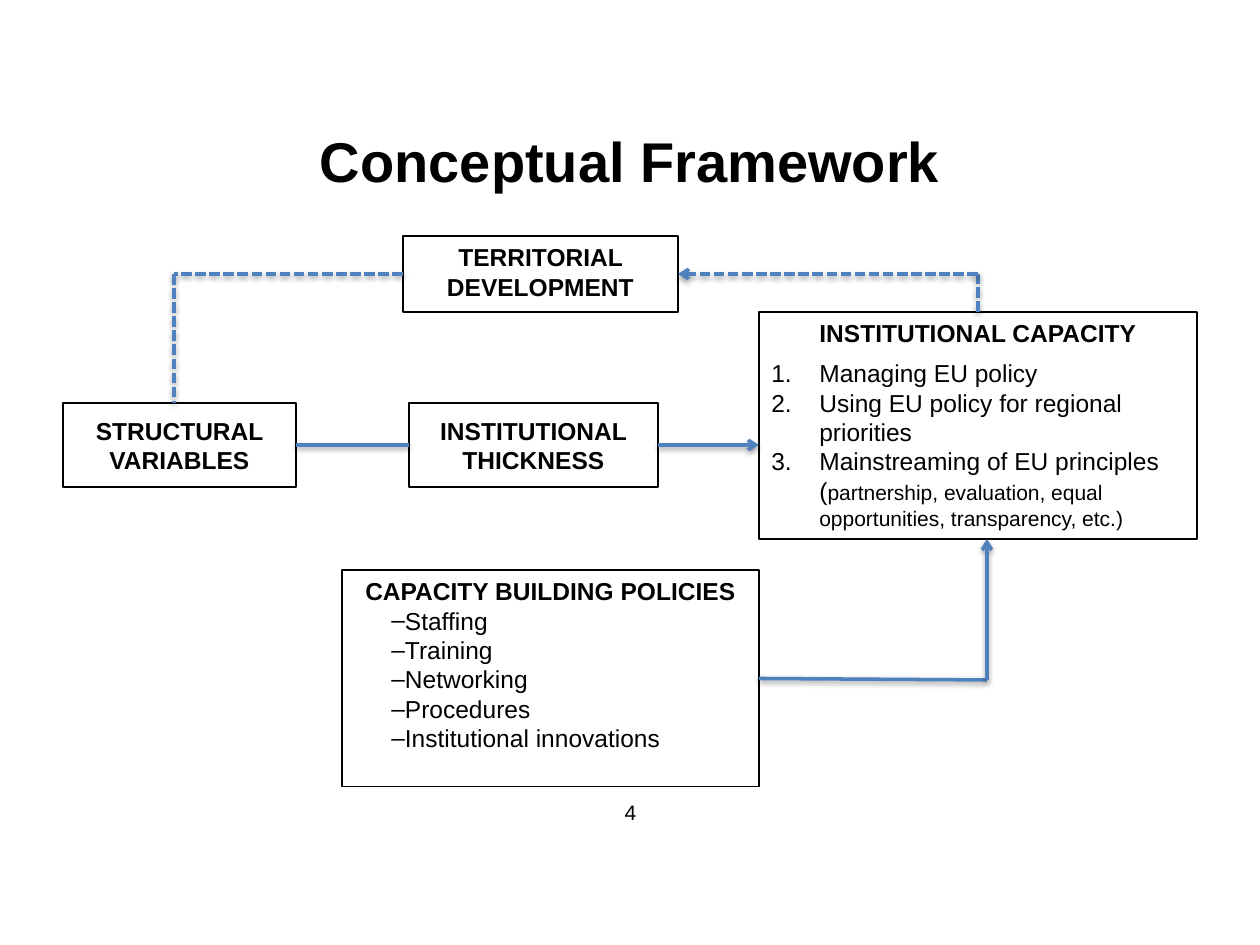
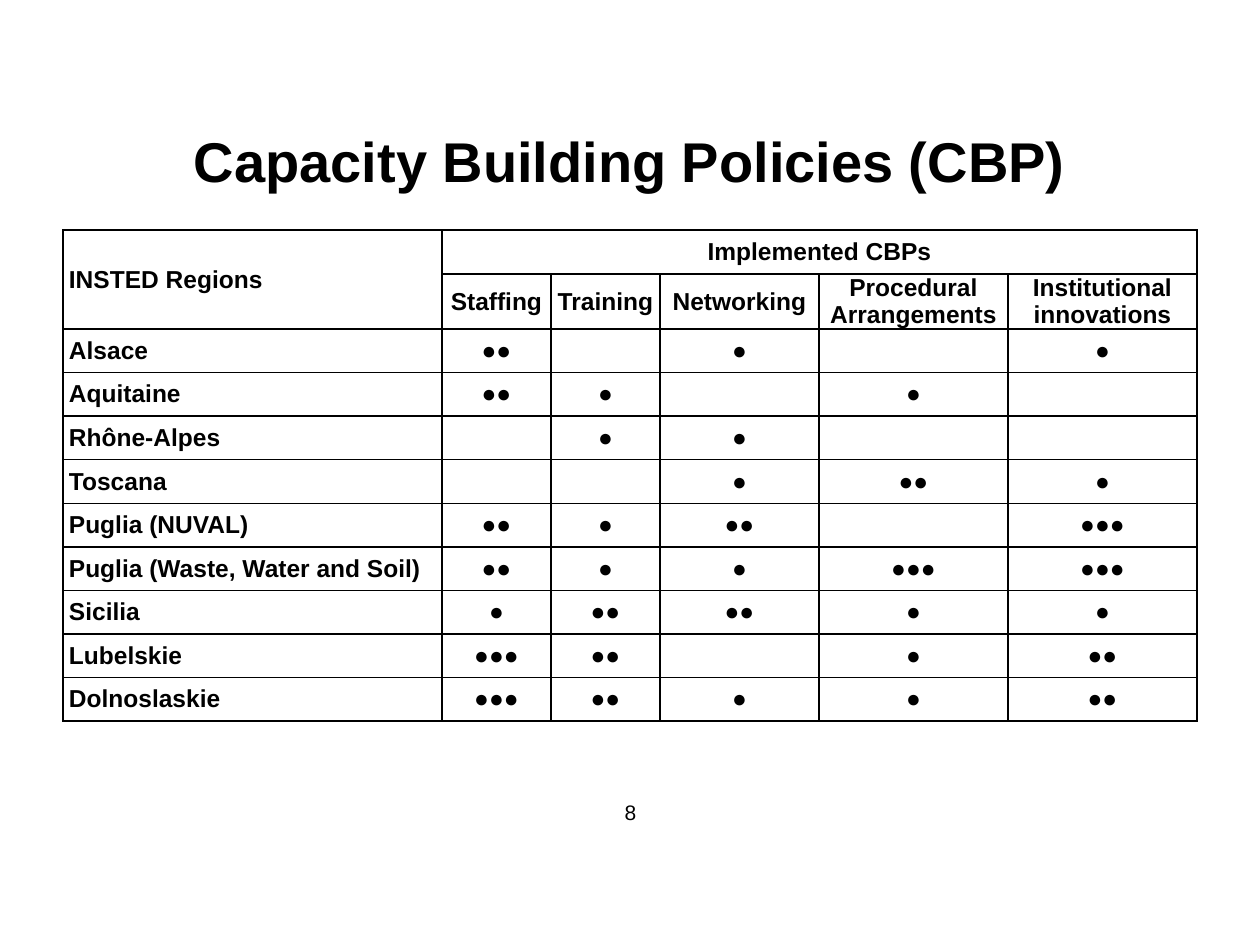
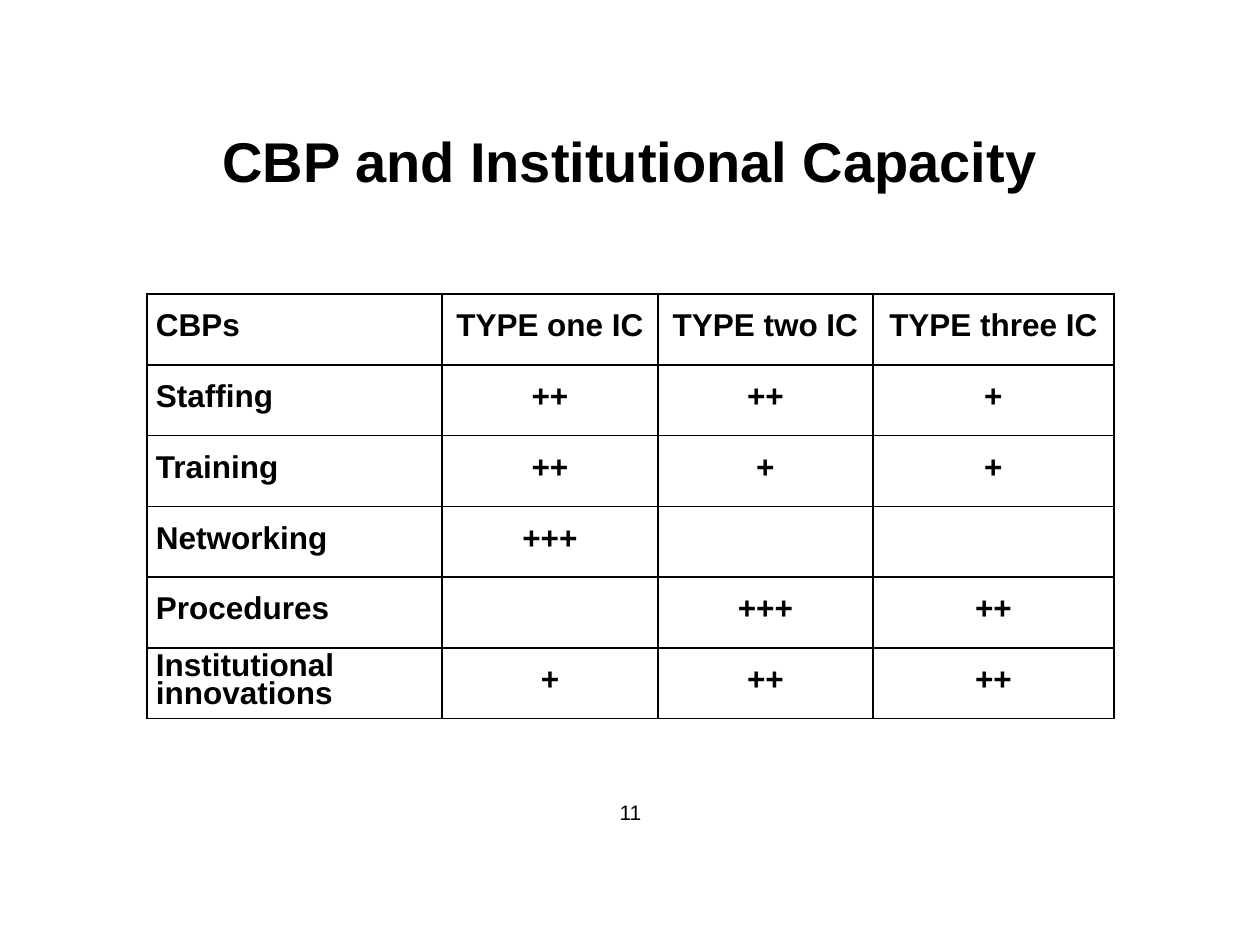
from dataclasses import dataclass

from lxml import etree
from pptx import Presentation
from pptx.dml.color import RGBColor
from pptx.enum import dml, shapes, text
from pptx.oxml import ns
from pptx.util import Pt

SCALE = 914400 / 126
LEFT, MID = text.PP_ALIGN.LEFT, text.PP_ALIGN.CENTER
TOP, CORE = text.MSO_ANCHOR.TOP, text.MSO_ANCHOR.MIDDLE


@dataclass(frozen=True)
class Theme:
    font: str = "Arial"
    ink: str = "000000"
    paper: str = "FFFFFF"
    link: str = "4F81BD"
    title: int = 32
    large: int = 18
    body: int = 14
    small: int = 12


def emu(px):
    return round(px * SCALE)


def color(code):
    return RGBColor.from_string(code)


def node(parent, tag, **attrs):
    child = etree.SubElement(parent, ns.qn("a:" + tag))
    for key, value in attrs.items():
        child.set(key, str(value))
    return child


def write(frame, words, theme, size=None, bold=False, align=MID, after=None,
          line=None, bullet=None, indent=(0, 0), tail=None):
    size = size or theme.body
    para = frame.paragraphs[0]
    if para.runs:
        para = frame.add_paragraph()
    para.alignment = align
    if after:
        para.space_after = Pt(after)
    if line:
        para.line_spacing = Pt(line)
    if bullet:
        props = para._p.get_or_add_pPr()
        props.set("marL", str(emu(indent[0])))
        props.set("indent", str(emu(indent[1])))
        node(props, "buFont", typeface=theme.font)
        if bullet == "1.":
            node(props, "buAutoNum", type="arabicPeriod")
        else:
            node(props, "buChar", char=bullet)
    para.font.size = Pt(size)
    for part, points in ((words, size), (tail, theme.small)):
        if part:
            run = para.add_run()
            run.text = part
            run.font.name = theme.font
            run.font.size = Pt(points)
            run.font.bold = bold
            run.font.color.rgb = color(theme.ink)


class Deck:
    def __init__(self, theme):
        self.theme = theme
        self.show = Presentation()
        self.show.slide_width = emu(1260)
        self.show.slide_height = emu(945)
        self.slide = None

    def page(self, title, number):
        self.slide = self.show.slides.add_slide(self.show.slide_layouts[5])
        head = self.slide.shapes.title
        head.left, head.top, head.width, head.height = map(emu, (63, 121, 1134, 79))
        foot = self.slide.shapes.add_textbox(*map(emu, (583, 787, 95, 50)))
        for shape in (head, foot):
            shape.text_frame.word_wrap = True
            shape.text_frame.auto_size = text.MSO_AUTO_SIZE.NONE
            shape.text_frame.vertical_anchor = CORE
        write(head.text_frame, title, self.theme, size=self.theme.title, bold=True)
        write(foot.text_frame, number, self.theme, size=self.theme.small)

    def box(self, label, *place, anchor=CORE, after=None):
        shape = self.slide.shapes.add_shape(shapes.MSO_SHAPE.RECTANGLE, *map(emu, place))
        shape.shadow.inherit = False
        shape.fill.solid()
        shape.fill.fore_color.rgb = color(self.theme.paper)
        shape.line.color.rgb = color(self.theme.ink)
        shape.line.width = Pt(0.75)
        shape.text_frame.word_wrap = True
        shape.text_frame.vertical_anchor = anchor
        write(shape.text_frame, label, self.theme, bold=True, after=after)
        return shape

    def items(self, shape, lines, **style):
        for line in lines:
            write(shape.text_frame, line, self.theme, align=LEFT, **style)

    def line(self, start, end, begin=None, finish=None, dash=False, arrow=False):
        link = self.slide.shapes.add_connector(
            shapes.MSO_CONNECTOR.STRAIGHT, *map(emu, start + end))
        if begin:
            link.begin_connect(*begin)
        if finish:
            link.end_connect(*finish)
        link.line.color.rgb = color(self.theme.link)
        link.line.width = Pt(2)
        if dash:
            link.line.dash_style = dml.MSO_LINE.SQUARE_DOT
        props = link._element.spPr
        if arrow:
            node(props.find(ns.qn("a:ln")), "tailEnd", type="arrow")
        glow = node(node(props, "effectLst"), "outerShdw", blurRad=40000,
                    dist=20000, dir=5400000, rotWithShape=0)
        node(node(glow, "srgbClr", val=self.theme.ink), "alpha", val=38000)

    def edge(self, cell):
        props = cell._tc.get_or_add_tcPr()
        for side in "LRTB":
            rule = node(props, "ln" + side, w=Pt(1))
            node(node(rule, "solidFill"), "srgbClr", val=self.theme.ink)
        cell.fill.background()

    def grid(self, rows, left, top, cols, highs, heads=1, pad=6, plain=False, **style):
        frame = self.slide.shapes.add_table(
            len(rows), len(cols), *map(emu, (left, top, sum(cols), sum(highs))))
        table = frame.table
        table.first_row = table.horz_banding = False
        for col, wide in zip(table.columns, cols):
            col.width = emu(wide)
        for row, high in zip(table.rows, highs):
            row.height = emu(high)
        for r, row in enumerate(rows):
            for c, words in enumerate(row):
                cell = table.cell(r, c)
                self.edge(cell)
                cell.margin_left = cell.margin_right = emu(pad)
                cell.margin_top = cell.margin_bottom = 0
                cell.vertical_anchor = CORE
                if words:
                    write(cell.text_frame, words, self.theme,
                          bold=not plain or r < heads or c == 0,
                          align=MID if c else LEFT, **style)
        return table


def model(deck):
    deck.page("Conceptual Framework", "4")
    growth = deck.box("TERRITORIAL DEVELOPMENT", 403, 236, 275, 76, anchor=TOP)
    skill = deck.box("INSTITUTIONAL CAPACITY", 759, 312, 438, 227, anchor=TOP, after=6)
    numbers = dict(bullet="1.", indent=(48, -48))
    deck.items(skill, ["Managing EU policy", "Using EU policy for regional priorities"],
               **numbers)
    deck.items(skill, ["Mainstreaming of EU principles ("],
               tail="partnership, evaluation, equal opportunities, transparency, etc.)",
               **numbers)
    plans = deck.box("CAPACITY BUILDING POLICIES", 342, 570, 417, 217, anchor=TOP)
    deck.items(plans, ["Staffing", "Training", "Networking", "Procedures",
                       "Institutional innovations"], bullet="–", indent=(13, 24))
    base = deck.box("STRUCTURAL VARIABLES", 63, 403, 233, 84)
    thick = deck.box("INSTITUTIONAL THICKNESS", 409, 403, 249, 84)

    deck.line((296, 445), (409, 445), begin=(base, 3), finish=(thick, 1))
    deck.line((658, 445), (759, 445), begin=(thick, 3), arrow=True)
    deck.line((759, 679), (987, 680), begin=(plans, 3))
    deck.line((987, 680), (987, 539), arrow=True)
    deck.line((403, 274), (174, 274), begin=(growth, 1), dash=True)
    deck.line((174, 274), (174, 403), dash=True)
    deck.line((978, 312), (978, 274), begin=(skill, 0), dash=True)
    deck.line((978, 274), (678, 274), finish=(growth, 3), dash=True, arrow=True)


def regions(deck):
    deck.page("Capacity Building Policies (CBP)", "8")
    scores = [
        ("Alsace", 2, 0, 1, 0, 1),
        ("Aquitaine", 2, 1, 0, 1, 0),
        ("Rhône-Alpes", 0, 1, 1, 0, 0),
        ("Toscana", 0, 0, 1, 2, 1),
        ("Puglia (NUVAL)", 2, 1, 2, 0, 3),
        ("Puglia (Waste, Water and Soil)", 2, 1, 1, 3, 3),
        ("Sicilia", 1, 2, 2, 1, 1),
        ("Lubelskie", 3, 2, 0, 1, 2),
        ("Dolnoslaskie", 3, 2, 1, 1, 2),
    ]
    rows = [
        ("INSTED Regions", "Implemented CBPs", "", "", "", ""),
        ("", "Staffing", "Training", "Networking", "Procedural Arrangements",
         "Institutional innovations"),
    ]
    rows += [(name, *("●" * count for count in counts)) for name, *counts in scores]
    highs = [44, 55] + [392 / len(scores)] * len(scores)
    table = deck.grid(rows, 63, 230, (379, 109, 109, 159, 189, 189), highs,
                      heads=2, plain=True)
    table.cell(0, 0).merge(table.cell(1, 0))
    table.cell(0, 1).merge(table.cell(0, 5))


def types(deck):
    deck.page("CBP and Institutional Capacity", "11")
    scores = [
        ("Staffing", 2, 2, 1),
        ("Training", 2, 1, 1),
        ("Networking", 3, 0, 0),
        ("Procedures", 0, 3, 2),
        ("Institutional innovations", 1, 2, 2),
    ]
    rows = [("CBPs", "TYPE one IC", "TYPE two IC", "TYPE three IC")]
    rows += [(name, *("+" * count for count in counts)) for name, *counts in scores]
    deck.grid(rows, 147, 294, (295, 216, 215, 241), [425 / len(rows)] * len(rows),
              pad=9, size=deck.theme.large, line=16)


def main():
    deck = Deck(Theme())
    model(deck)
    regions(deck)
    types(deck)
    deck.show.save("out.pptx")


if __name__ == "__main__":
    main()
